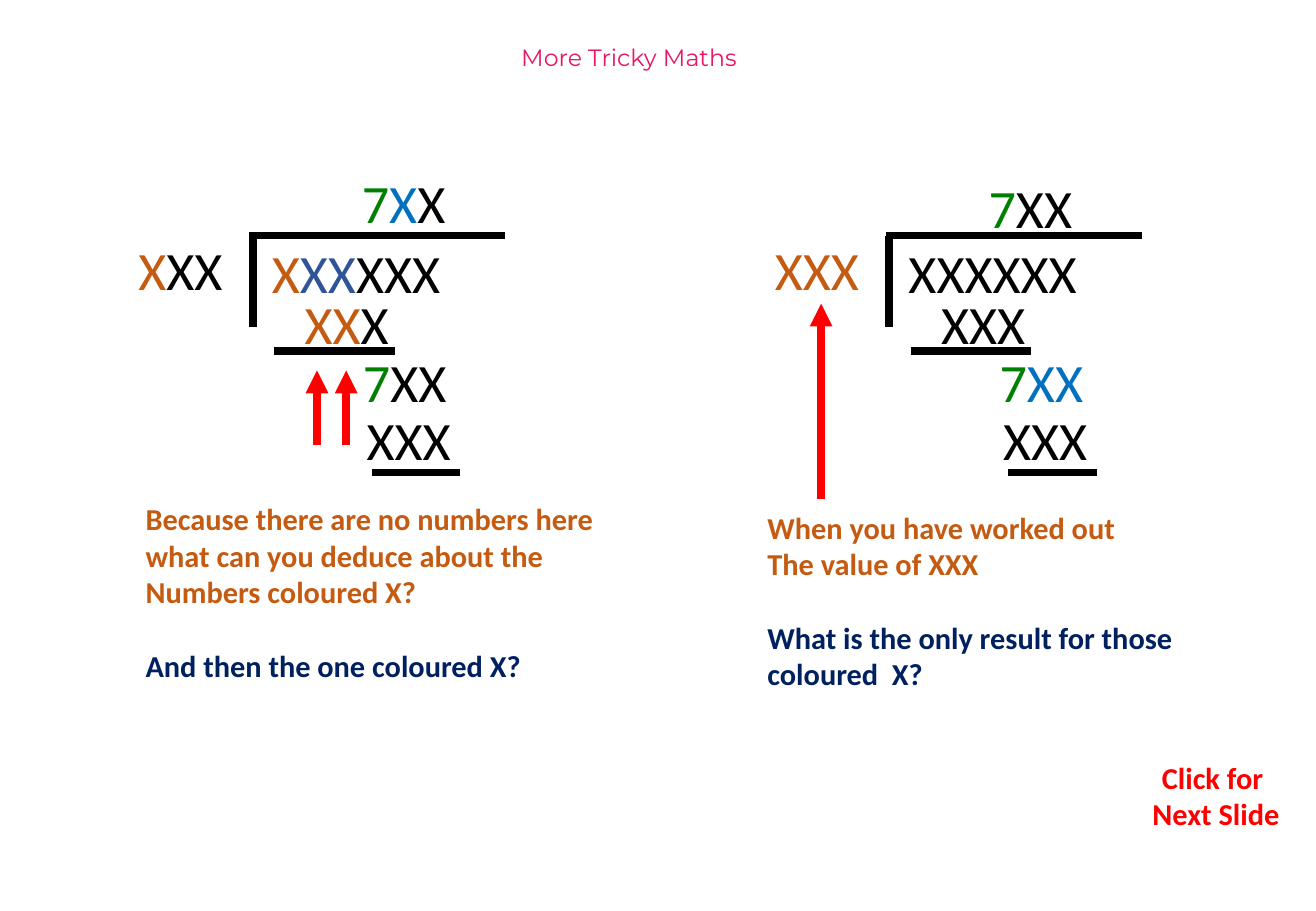
"""Build the "More Tricky Maths" slide with two long-division puzzles."""
from dataclasses import dataclass

from lxml import etree
from pptx import Presentation
from pptx.dml.color import RGBColor
from pptx.enum.shapes import MSO_CONNECTOR
from pptx.enum.text import MSO_ANCHOR, MSO_AUTO_SIZE, PP_ALIGN
from pptx.oxml.ns import qn
from pptx.util import Pt

STRAIGHT = MSO_CONNECTOR.STRAIGHT
TOP = MSO_ANCHOR.TOP
GROW = MSO_AUTO_SIZE.SHAPE_TO_FIT_TEXT
LEFT, CENTER = PP_ALIGN.LEFT, PP_ALIGN.CENTER


@dataclass(frozen=True)
class Theme:
    pink: str = "E81766"
    orange: str = "C55A11"
    navy: str = "002060"
    indigo: str = "2F5597"
    blue: str = "0070C0"
    green: str = "008000"
    red: str = "FF0000"
    black: str = "000000"
    title_font: str = "Montserrat"
    body_font: str = "Calibri"
    title_size: float = 14
    digit_size: float = 32
    note_size: float = 18
    line_width: float = 4.5


theme = Theme()


def add_text(box, paragraphs, size, bold=False, align=LEFT):
    left, top, width, height = box
    shape = slide.shapes.add_textbox(Pt(left), Pt(top), Pt(width), Pt(height))
    frame = shape.text_frame
    frame.word_wrap = False
    frame.auto_size = GROW
    for index, (runs, space_before) in enumerate(paragraphs):
        paragraph = frame.add_paragraph() if index else frame.paragraphs[0]
        paragraph.alignment = align
        paragraph.space_before = Pt(space_before)
        for text, color in runs:
            for part, line in enumerate(text.split("\n")):
                if part:
                    paragraph.add_line_break()
                run = paragraph.add_run()
                run.text = line
                run.font.name = theme.body_font
                run.font.size = Pt(size)
                run.font.bold = bold
                run.font.color.rgb = RGBColor.from_string(color)


def add_line(start_x, start_y, end_x, end_y, color, arrow=False):
    connector = slide.shapes.add_connector(
        STRAIGHT, Pt(start_x), Pt(start_y), Pt(end_x), Pt(end_y))
    connector.line.color.rgb = RGBColor.from_string(color)
    connector.line.width = Pt(theme.line_width)
    properties = connector._element.spPr
    if arrow:
        outline = properties.find(qn("a:ln"))
        etree.SubElement(outline, qn("a:tailEnd"), type="triangle")
    etree.SubElement(properties, qn("a:effectLst"))


presentation = Presentation()
presentation.slide_width, presentation.slide_height = Pt(780), Pt(540)
slide = presentation.slides.add_slide(presentation.slide_layouts[5])

title = slide.shapes.title
title.left, title.top, title.width, title.height = Pt(285), Pt(21.6), Pt(175.7), Pt(41.8)
title.text_frame.text = "More Tricky Maths"
title.text_frame.vertical_anchor = TOP
title.text_frame.word_wrap = False
title_paragraph = title.text_frame.paragraphs[0]
title_paragraph.alignment = CENTER
title_font = title_paragraph.runs[0].font
title_font.name = theme.title_font
title_font.size = Pt(theme.title_size)
title_font.color.rgb = RGBColor.from_string(theme.pink)

number_boxes = [
    (74.9, 136.8, 64.8),
    (154.1, 138.2, 115.2),
    (173.5, 168.5, 72),
    (208.1, 203, 72),
    (210.2, 237.6, 72),
]
division_lines = [
    (149.8, 139.7, 149.8, 193.7),
    (147.6, 139.7, 299.5, 139.7),
    (162.7, 208.1, 234, 208.1),
    (220.3, 280.1, 272.9, 280.1),
]
puzzles = [
    (0, (207.4, 97.2, 64.8),
     [("7", theme.green), ("X", theme.blue), ("X", theme.black)],
     [
         [("X", theme.orange), ("XX", theme.black)],
         [("X", theme.orange), ("XX", theme.indigo), ("XXX", theme.black)],
         [("XX", theme.orange), ("X", theme.black)],
         [("7", theme.green), ("XX", theme.black)],
         [("XXX", theme.black)],
     ]),
    (377.3, (201.6, 100.1, 64.8),
     [("7", theme.green), ("XX", theme.black)],
     [
         [("XXX", theme.orange)],
         [("XXXXXX", theme.black)],
         [("XXX", theme.black)],
         [("7", theme.green), ("XX", theme.blue)],
         [("XXX", theme.black)],
     ]),
]
for offset, quotient_box, quotient, numbers in puzzles:
    boxes = [quotient_box, *number_boxes]
    for (left, top, width), runs in zip(boxes, [quotient, *numbers]):
        add_text((left + offset, top, width, 46.1), [(runs, 0)], theme.digit_size)
    for start_x, start_y, end_x, end_y in division_lines:
        add_line(start_x + offset, start_y, end_x + offset, end_y, theme.black)

for x, bottom, top in [(187.9, 263.5, 219.6), (205.2, 263.5, 219.6), (486.7, 295.9, 180)]:
    add_line(x, bottom, x, top, theme.red, arrow=True)

notes = [
    ((79.2, 293, 281.5, 116.6),
     "Because there are no numbers here\nwhat can you deduce about the",
     "Numbers coloured X?",
     "And then the one coloured X?"),
    ((447.8, 298.1, 257, 116.6),
     "When you have worked out",
     "The value of XXX",
     "What is the only result for those\ncoloured  X?"),
]
for box, opening, ending, question in notes:
    add_text(box, [([(opening, theme.orange)], 0),
                   ([(ending, theme.orange)], 0),
                   ([(question, theme.navy)], 22)],
             theme.note_size, bold=True)

add_text((675.4, 446.4, 90.7, 51.1), [([("Click for \nNext Slide", theme.red)], 0)],
         theme.note_size, bold=True, align=CENTER)

presentation.save("out.pptx")
